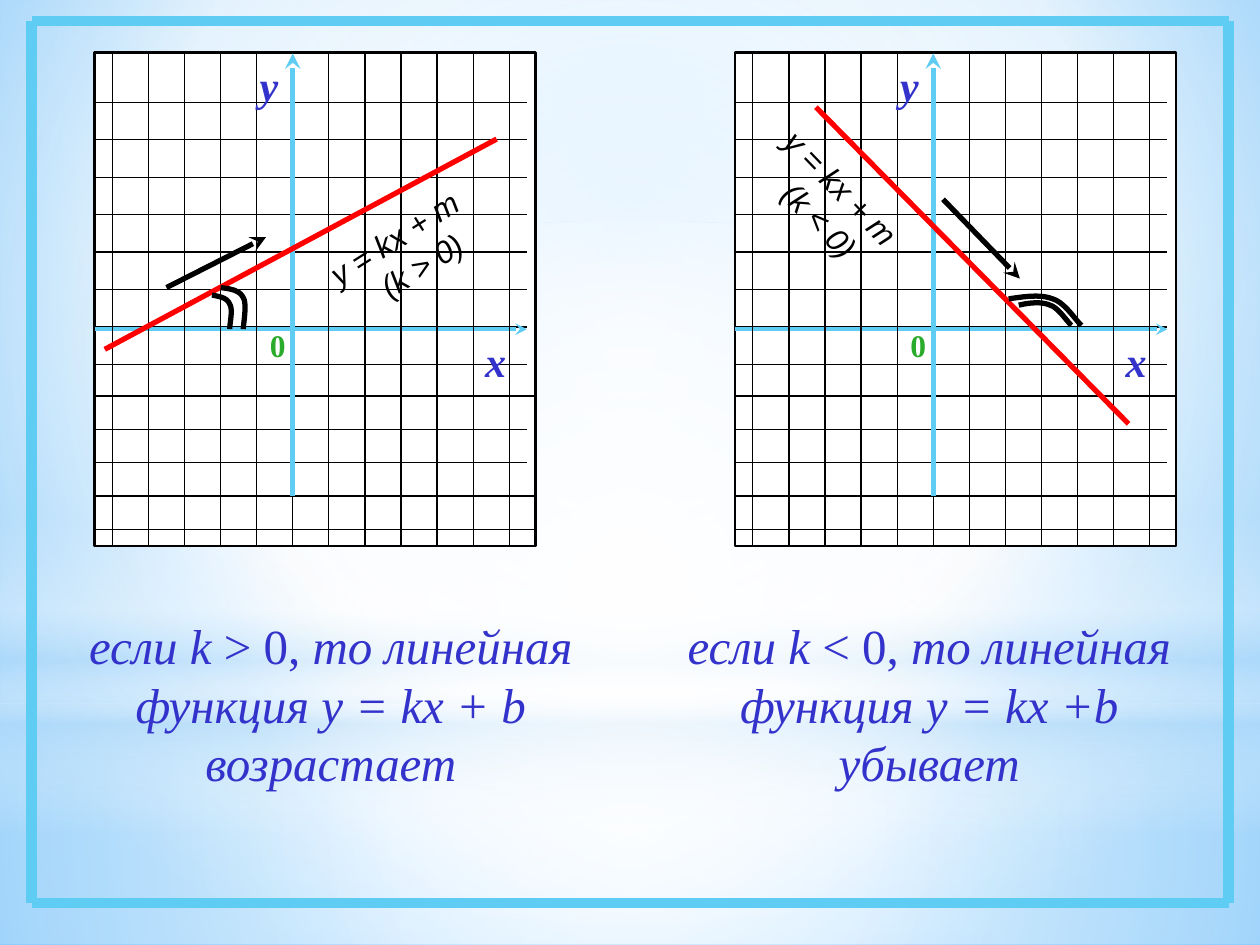
from typing import NamedTuple

from lxml import etree
from pptx import Presentation
from pptx.dml.color import RGBColor
from pptx.enum import shapes, text
from pptx.oxml.ns import qn
from pptx.util import Inches, Pt

# Slide grid: 120 columns by 90 rows. Graph grid: squared-paper cells.
UNIT = Inches(10) / 120
CELL_W, CELL_H = 3.437, 3.564
SKY, INK, RED, BLUE, GREEN = "5ECCF3", "000000", "FF0000", "3333CC", "2BAB2B"
SERIF, SANS = "Times New Roman", "Arial"
PAPER_W, PAPER_H = 42, 47
LEFT, RIGHT, TOP, BOTTOM = -0.49, 11.73, -1.31, 11.87
AXIS_COL, AXIS_ROW, GRID_END = 5, 6.06, 11.49
ROWS = list(range(8)) + [7.85 + 0.89 * i for i in range(5)]
WIDE_ROWS = {8, 11, 12}


class Box(NamedTuple):
    x: float
    y: float
    w: float
    h: float


class Glow(NamedTuple):
    kind: shapes.MSO_SHAPE
    box: Box
    stops: list
    angle: int | None = None


class Graph(NamedTuple):
    x: float
    y: float
    line: tuple
    arrow: tuple
    arcs: list
    label: Box
    rotation: float
    condition: str
    caption: Box
    caption_runs: list


class Run(NamedTuple):
    text: str
    size: float
    color: str
    name: str = SERIF
    bold: bool = False
    italic: bool = True


def rgb(color: str) -> RGBColor:
    return RGBColor.from_string(color)


def emu(*values: float) -> list[int]:
    return [round(v * UNIT) for v in values]


def gradient(stops: list, focus=(50, 50, 50, 50), angle: int | None = None):
    """Build a gradient from (position, colour, opacity) stops."""
    grad = etree.Element(qn("a:gradFill"), rotWithShape="1")
    stop_list = etree.SubElement(grad, qn("a:gsLst"))
    for pos, color, opacity in stops:
        stop = etree.SubElement(stop_list, qn("a:gs"), pos=str(pos * 1000))
        clr = etree.SubElement(stop, qn("a:srgbClr"), val=color)
        if opacity < 100:
            etree.SubElement(clr, qn("a:alpha"), val=str(opacity * 1000))
    if angle is not None:
        etree.SubElement(grad, qn("a:lin"), ang=str(angle * 60000), scaled="0")
    else:
        shade = etree.SubElement(grad, qn("a:path"), {"path": "circle"})
        sides = {k: str(v * 1000) for k, v in zip("ltrb", focus)}
        etree.SubElement(shade, qn("a:fillToRect"), sides)
    return grad


def add_glow(parent, glow: Glow) -> None:
    sp = parent.add_shape(glow.kind, *emu(*glow.box))
    sp.shadow.inherit = False
    sp.line.fill.background()
    sp.fill.background()
    props = sp._element.spPr
    props.replace(props.find(qn("a:noFill")), gradient(glow.stops, angle=glow.angle))


def add_line(parent, ends: tuple, color: str, width: float, arrow=False) -> None:
    c = parent.add_connector(shapes.MSO_CONNECTOR.STRAIGHT, *emu(*ends))
    c.line.color.rgb, c.line.width = rgb(color), Pt(width)
    if arrow:
        etree.SubElement(c.line._get_or_add_ln(), qn("a:tailEnd"), type="stealth")
    etree.SubElement(c._element.spPr, qn("a:effectLst"))


def add_text(parent, box: Box, paragraphs: list, align=None, grow=True):
    sp = parent.add_textbox(*emu(*box))
    tf = sp.text_frame
    tf.word_wrap = grow
    if grow:
        tf.auto_size = text.MSO_AUTO_SIZE.SHAPE_TO_FIT_TEXT
    for i, runs in enumerate(paragraphs):
        p = tf.paragraphs[0] if i == 0 else tf.add_paragraph()
        p.alignment = align
        if grow:
            before = etree.SubElement(p._p.get_or_add_pPr(), qn("a:spcBef"))
            etree.SubElement(before, qn("a:spcPct"), val="50000")
        for run in runs:
            r = p.add_run()
            r.text = run.text
            r.font.color.rgb = rgb(run.color)
            fmt = {"size": Pt(run.size), "name": run.name,
                   "bold": run.bold, "italic": run.italic}
            for key, value in fmt.items():
                setattr(r.font, key, value)
    return sp


def curve_points(points: list, steps: int = 10) -> list:
    """Sample a chain of cubic curves."""
    out = [points[0]]
    for i in range(0, len(points) - 1, 3):
        for n in range(1, steps + 1):
            t = n / steps
            weights = ((1 - t) ** 3, 3 * t * (1 - t) ** 2, 3 * t * t * (1 - t), t ** 3)
            out.append(tuple(sum(w * pt[k] for w, pt in zip(weights, points[i:i + 4]))
                             for k in (0, 1)))
    return out


def draw_graph(slide, g: Graph) -> None:
    parent = slide.shapes.add_group_shape().shapes

    def at(col: float, row: float) -> tuple:
        return g.x + 1.7 + col * CELL_W, g.y + 4.75 + row * CELL_H

    def line(c1, r1, c2, r2, color=INK, width=0.75, arrow=False) -> None:
        add_line(parent, at(c1, r1) + at(c2, r2), color, width, arrow)

    def cells(b: Box) -> Box:
        return Box(*at(b.x, b.y), b.w * CELL_W, b.h * CELL_H)

    # Squared paper and axes
    paper = parent.add_shape(shapes.MSO_SHAPE.RECTANGLE, *emu(g.x, g.y, PAPER_W, PAPER_H))
    paper.shadow.inherit = False
    paper.fill.solid()
    paper.fill.fore_color.rgb = rgb("FFFFFF")
    paper.line.color.rgb, paper.line.width = rgb(INK), Pt(1.5)
    for i, row in enumerate(ROWS):
        line(LEFT, row, RIGHT if i in WIDE_ROWS else GRID_END, row)
    line(AXIS_COL, ROWS[11], AXIS_COL, TOP, SKY, 3, True)
    line(LEFT, AXIS_ROW, GRID_END, AXIS_ROW, SKY, 2.25, True)
    for col in range(12):
        line(col, ROWS[11] if col == AXIS_COL else TOP, col, BOTTOM)
    for box, run in ((Box(9.99, 6.06, 1.29, 1.68), Run("х", 24, BLUE, bold=True)),
                     (Box(4.02, 5.82, 0.98, 1.35), Run("0", 18, GREEN, bold=True, italic=False)),
                     (Box(3.74, TOP, 1.26, 1.68), Run("у", 24, BLUE, bold=True))):
        add_text(parent, cells(box), [[run]])

    # Function line, direction arrow, angle arcs
    line(*g.line, RED, 3)
    line(*g.arrow, INK, 3, True)
    for arc in g.arcs:
        pts = [emu(*at(*pt)) for pt in curve_points(arc)]
        builder = parent.build_freeform(*pts[0])
        builder.add_line_segments(pts[1:], close=False)
        sp = builder.convert_to_shape()
        sp.shadow.inherit = False
        sp.fill.background()
        sp.line.color.rgb, sp.line.width = rgb(INK), Pt(3)

    # Slanted formula, second line indented
    formula = [[Run(t, 18, INK, SANS)] for t in ("y = kx + m", g.condition)]
    sp = add_text(parent, cells(g.label), formula, text.PP_ALIGN.CENTER, grow=False)
    sp.rotation = g.rotation
    sp.text_frame.paragraphs[1]._p.get_or_add_pPr().set("marL", str(Pt(10)))

    runs = [Run(t, 28, BLUE, italic=i != 1) for i, t in enumerate(g.caption_runs)]
    add_text(slide.shapes, g.caption, [runs], text.PP_ALIGN.CENTER)


RECT, OVAL = shapes.MSO_SHAPE.RECTANGLE, shapes.MSO_SHAPE.OVAL
W, PALE = "FFFFFF", "B4DCFA"
GLOWS = [
    Glow(RECT, Box(0, 67, 120, 23), [(0, W, 91), (37, W, 76), (100, PALE, 79)]),
    Glow(RECT, Box(0, 0, 120, 67), [(0, W, 89), (48, W, 62), (100, PALE, 79)]),
    Glow(RECT, Box(0, 49.4, 120, 30), [(0, W, 0), (29, W, 30), (45, PALE, 40),
                                       (55, W, 26), (65, PALE, 60), (100, W, 0)], 90),
    Glow(OVAL, Box(0, 21, 120, 67), [(0, W, 100), (56, W, 0)]),
]
FRAME = [(3, 2, 3, 86), (117, 2, 117, 86), (117, 86, 3, 86), (117, 2, 3, 2)]
GRAPHS = [
    Graph(9, 5, (-0.21, 6.6, 10.65, 0.98), (1.5, 4.95, 4.26, 3.6),
          [[(2.76, 5.15), (2.97, 5.19), (3.18, 5.22), (3.25, 5.39),
            (3.35, 5.52), (3.25, 5.93), (3.25, 6.06)],
           [(3, 4.95), (3.28, 4.98), (3.53, 5.02), (3.63, 5.22),
            (3.74, 5.39), (3.63, 5.93), (3.63, 6.06)]],
          Box(5.48, 2.93, 4.75, 1.55), 327.8, "(k > 0)", Box(7, 58, 49, 18),
          ["если k ", "> 0, ", "то линейная функция у = kx + b возрастает"]),
    Graph(70, 5, (1.75, 0.13, 10.41, 8.59), (5.27, 2.59, 7.4, 4.71),
          [[(7.37, 5.42), (7.68, 5.35), (8, 5.32), (8.24, 5.42),
            (8.48, 5.49), (8.73, 5.89), (8.83, 5.96)],
           [(7.09, 5.25), (7.54, 5.19), (7.96, 5.12), (8.31, 5.25),
            (8.66, 5.35), (8.97, 5.86), (9.11, 5.96)]],
          Box(0, 1.58, 4.75, 1.55), 46.1, "(k < 0)", Box(64, 58, 49, 18),
          ["если k ", "< 0, ", "то линейная функция у = kx +b убывает"]),
]


def main() -> None:
    prs = Presentation()
    prs.slide_width, prs.slide_height = emu(120, 90)
    slide = prs.slides.add_slide(prs.slide_layouts[6])

    # Background and frame
    slide.background.fill.solid()
    bg = slide._element.find(".//" + qn("p:bgPr"))
    bg.replace(bg[0], gradient([(0, "9ED5FF", 100), (60, W, 100), (100, "5BB9FF", 100)],
                               focus=(20, 10, 20, 60)))
    for glow in GLOWS:
        add_glow(slide.shapes, glow)
    for ends in FRAME:
        add_line(slide.shapes, ends, SKY, 6)

    for graph in GRAPHS:
        draw_graph(slide, graph)
    prs.save("out.pptx")


if __name__ == "__main__":
    main()
